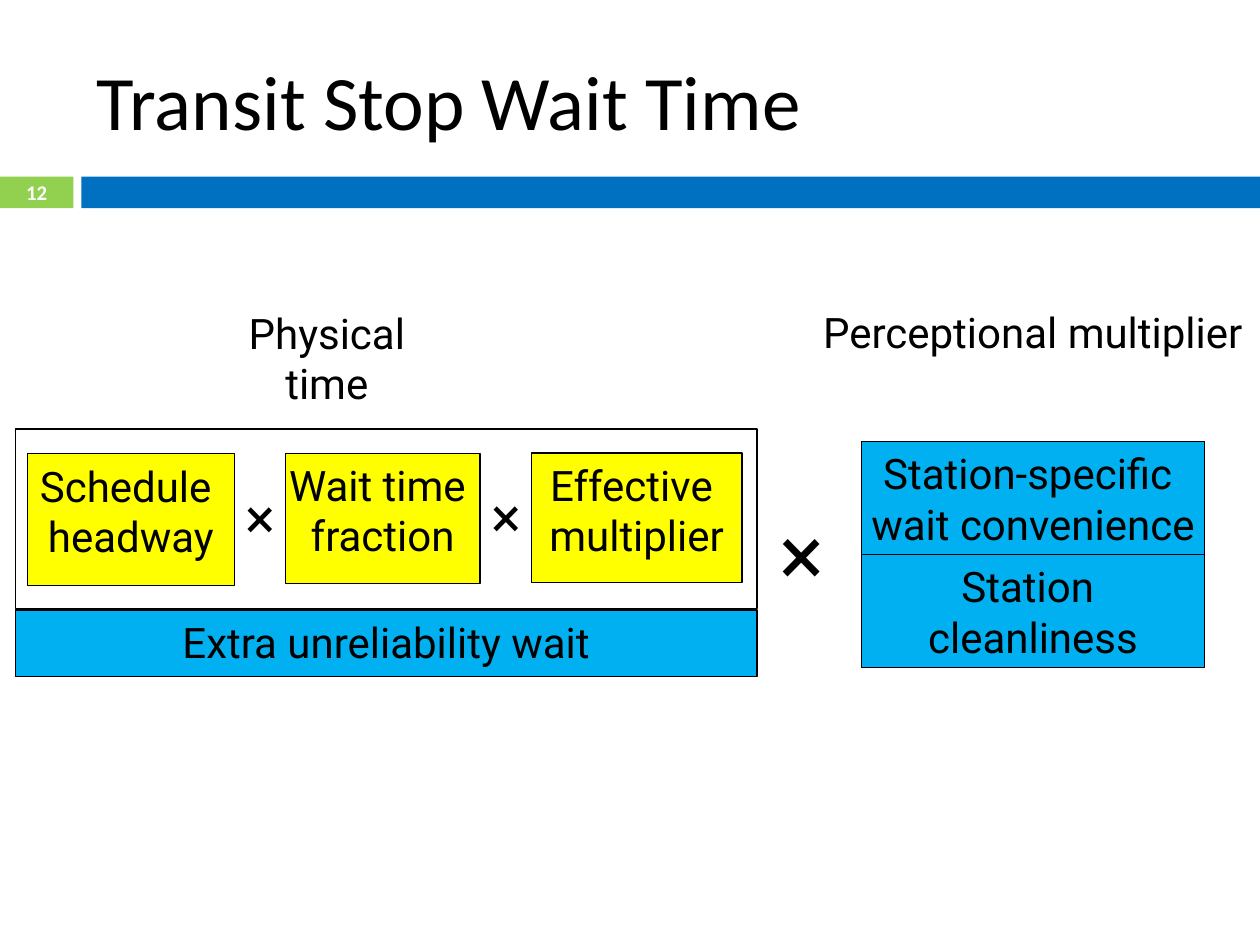
from pptx import Presentation
from pptx.dml.color import RGBColor
from pptx.enum.shapes import MSO_SHAPE
from pptx.enum.text import MSO_ANCHOR, MSO_AUTO_SIZE, PP_ALIGN
from pptx.util import Cm, Pt

RECTANGLE = MSO_SHAPE.RECTANGLE
TOP, MIDDLE = MSO_ANCHOR.TOP, MSO_ANCHOR.MIDDLE
LEFT, CENTER = PP_ALIGN.LEFT, PP_ALIGN.CENTER
GROW = MSO_AUTO_SIZE.SHAPE_TO_FIT_TEXT

BLACK, WHITE = "000000", "FFFFFF"
YELLOW, SKY, BLUE, GREEN = "FFFF00", "00B0F0", "0070C0", "92D050"


def color(value):
    return RGBColor.from_string(value)


def write(shape, text, size, font="Roboto", text_color=BLACK, align=CENTER, anchor=TOP, bold=False):
    text_frame = shape.text_frame
    text_frame.text = text
    text_frame.word_wrap = False
    text_frame.vertical_anchor = anchor
    for paragraph in text_frame.paragraphs:
        paragraph.alignment = align
        for run in paragraph.runs:
            run.font.name = font
            run.font.size = Pt(size)
            run.font.bold = bold
            run.font.color.rgb = color(text_color)


presentation = Presentation()
presentation.slide_width, presentation.slide_height = Cm(25.4), Cm(19.05)
slide = presentation.slides.add_slide(presentation.slide_layouts[5])

title = slide.shapes.title
title.left, title.top, title.width, title.height = Cm(1.7), Cm(0.64), Cm(22.66), Cm(2.74)
write(title, "Transit Stop Wait Time", 44, "Calibri", align=LEFT, anchor=MIDDLE)

rectangles = [
    (0, 3.56, 1.48, 0.64, GREEN, None, ""),
    (1.64, 3.56, 23.76, 0.64, BLUE, None, ""),
    (0.55, 9.15, 4.18, 2.66, YELLOW, BLACK, "Schedule \nheadway"),
    (5.75, 9.14, 3.93, 2.62, YELLOW, BLACK, "Wait time \nfraction"),
    (10.71, 9.13, 4.25, 2.62, YELLOW, BLACK, "Effective \nmultiplier"),
    (0.31, 12.3, 14.95, 1.34, SKY, BLACK, "Extra unreliability wait"),
    (0.31, 8.65, 14.95, 3.62, None, BLACK, ""),
    (17.37, 8.9, 6.91, 2.28, SKY, BLACK, "Station-specific \nwait convenience"),
    (17.37, 11.18, 6.91, 2.28, SKY, BLACK, "Station \ncleanliness"),
]
for left, top, width, height, fill, line, text in rectangles:
    shape = slide.shapes.add_shape(RECTANGLE, Cm(left), Cm(top), Cm(width), Cm(height))
    shape.shadow.inherit = False
    if fill:
        shape.fill.solid()
        shape.fill.fore_color.rgb = color(fill)
    else:
        shape.fill.background()
    if line:
        shape.line.color.rgb = color(line)
        shape.line.width = Pt(0.75)
    else:
        shape.line.fill.background()
    if text:
        write(shape, text, 24)

page_number = slide.shapes.add_textbox(Cm(0), Cm(3.53), Cm(1.48), Cm(0.69))
write(page_number, "12", 11.9, "Calibri", WHITE, anchor=MIDDLE, bold=True)

physical_label = slide.shapes.add_textbox(Cm(4.75), Cm(6.07), Cm(5.41), Cm(1.27))
write(physical_label, "Physical time", 24)
physical_label.text_frame.word_wrap = True
physical_label.text_frame.margin_left = Cm(0.05)
physical_label.text_frame.margin_right = Cm(1.78)

perception_label = slide.shapes.add_textbox(Cm(16.31), Cm(6.05), Cm(9.02), Cm(1.27))
write(perception_label, "Perceptional multiplier", 24)

multiplication_signs = [
    (15.29, 9.98, 1.75, 2.31, 48),
    (9.53, 9.58, 1.35, 1.63, 32),
    (4.57, 9.6, 1.35, 1.63, 32),
]
for left, top, width, height, size in multiplication_signs:
    sign = slide.shapes.add_textbox(Cm(left), Cm(top), Cm(width), Cm(height))
    write(sign, "×", size)
    sign.text_frame.auto_size = GROW

presentation.save("out.pptx")
